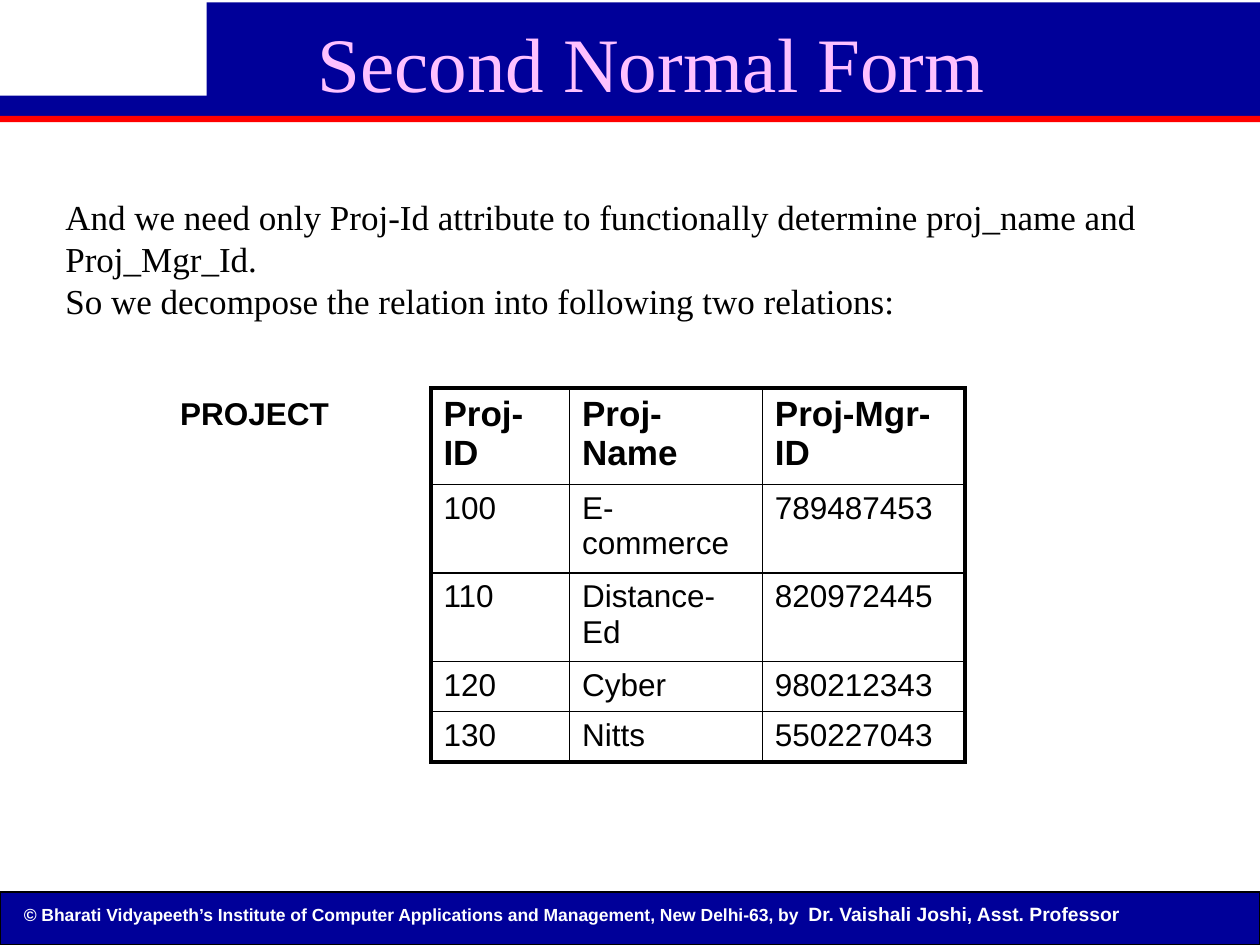
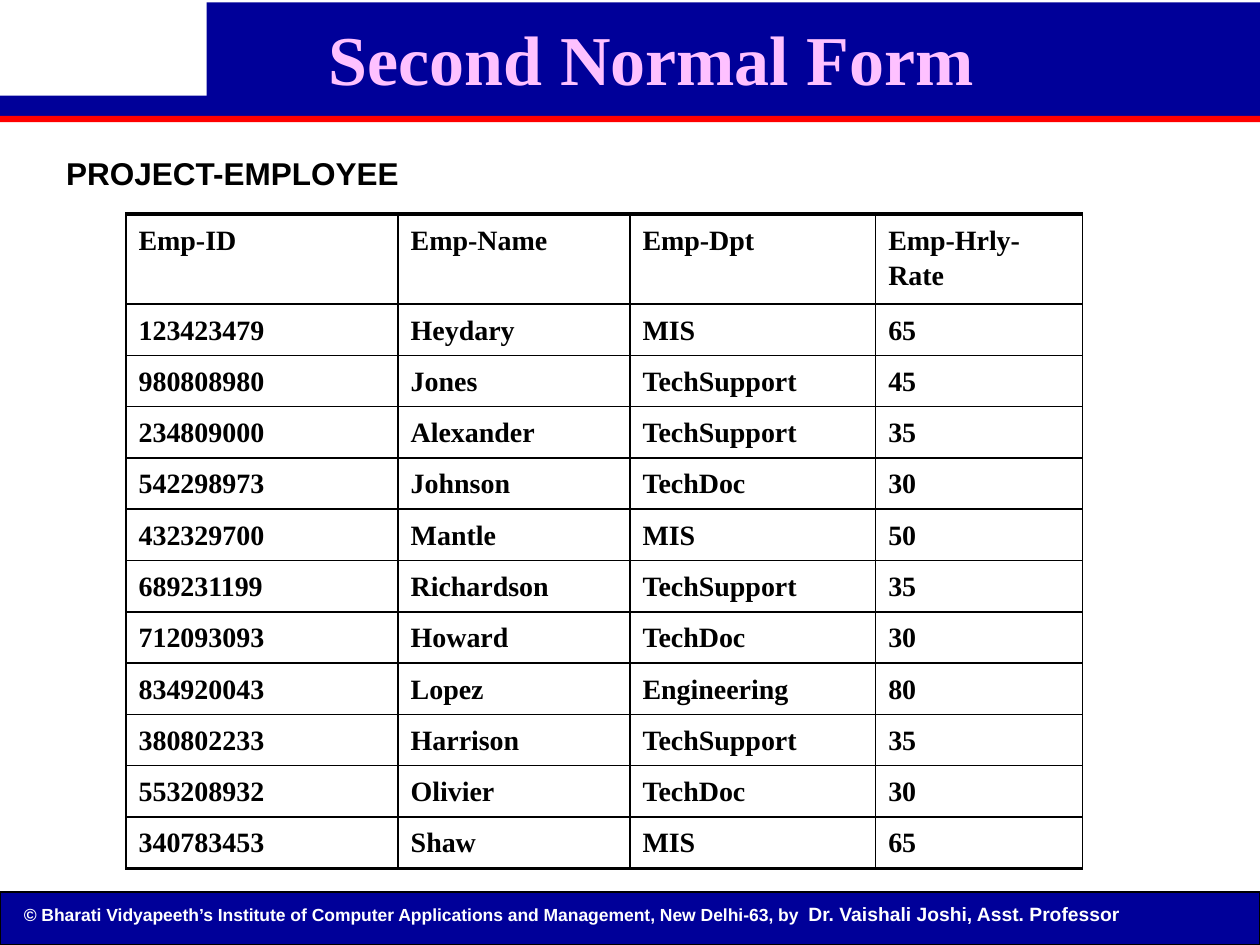
from lxml import etree
from pptx import Presentation
from pptx.dml.color import RGBColor
from pptx.enum.shapes import MSO_SHAPE
from pptx.enum.text import PP_ALIGN
from pptx.oxml.ns import qn
from pptx.util import Inches, Pt

NAVY = RGBColor(0x00, 0x00, 0x99)
RED = RGBColor(0xFF, 0x00, 0x00)
PINK = RGBColor(0xFE, 0xC1, 0xFF)
WHITE = RGBColor(0xFF, 0xFF, 0xFF)
BLACK = RGBColor(0x00, 0x00, 0x00)
SERIF, SANS = "Times New Roman", "Arial"
THIN, THICK = 1, 2.25

COPYRIGHT = ("© Bharati Vidyapeeth’s Institute of Computer Applications and "
             "Management, New Delhi-63, by ")
AUTHOR = " Dr. Vaishali Joshi, Asst. Professor"

PROJECTS = [
    ("Proj-ID", "Proj-Name", "Proj-Mgr-ID"),
    ("100", "E-commerce", "789487453"),
    ("110", "Distance-Ed", "820972445"),
    ("120", "Cyber", "980212343"),
    ("130", "Nitts", "550227043"),
]
EMPLOYEES = [
    ("Emp-ID", "Emp-Name", "Emp-Dpt", "Emp-Hrly-Rate"),
    ("123423479", "Heydary", "MIS", "65"),
    ("980808980", "Jones", "TechSupport", "45"),
    ("234809000", "Alexander", "TechSupport", "35"),
    ("542298973", "Johnson", "TechDoc", "30"),
    ("432329700", "Mantle", "MIS", "50"),
    ("689231199", "Richardson", "TechSupport", "35"),
    ("712093093", "Howard", "TechDoc", "30"),
    ("834920043", "Lopez", "Engineering", "80"),
    ("380802233", "Harrison", "TechSupport", "35"),
    ("553208932", "Olivier", "TechDoc", "30"),
    ("340783453", "Shaw", "MIS", "65"),
]


def style_font(font, size, name, color=BLACK, bold=False):
    font.size, font.name, font.bold = Pt(size), name, bold
    font.color.rgb = color


def add_band(s, x, y, w, h, color, outlined=False):
    sp = s.shapes.add_shape(MSO_SHAPE.RECTANGLE, Inches(x), Inches(y), Inches(w), Inches(h))
    sp.shadow.inherit = False
    sp.fill.solid()
    sp.fill.fore_color.rgb = color
    if outlined:
        sp.line.color.rgb = BLACK
        sp.line.width = Pt(0.75)
    else:
        sp.line.fill.background()


def add_text(s, x, y, w, h, text, size, name, color=BLACK, bold=False, align=PP_ALIGN.LEFT,
             wrap=True):
    tf = s.shapes.add_textbox(Inches(x), Inches(y), Inches(w), Inches(h)).text_frame
    tf.word_wrap = wrap
    tf.text = text
    for p in tf.paragraphs:
        p.alignment = align
        for r in p.runs:
            style_font(r.font, size, name, color, bold)
    return tf


def add_label(s, x, y, w, text):
    add_text(s, x, y, w, 0.4, text, 18, SANS, bold=True, align=PP_ALIGN.CENTER, wrap=False)


def add_base_slide(prs, title_height, title_size, title_bold):
    s = prs.slides.add_slide(prs.slide_layouts[6])
    # Header bands
    add_band(s, 0, 0.76, 10, 0.16, NAVY)
    add_band(s, 0, 0.92, 10, 0.05, RED)
    add_band(s, 1.64, 0.02, 8.36, 0.76, NAVY)
    # Footer
    add_band(s, 0, 7.08, 10, 0.42, NAVY, outlined=True)
    tf = add_text(s, 0.09, 7.11, 9.58, 0.29, COPYRIGHT, 10, SANS, WHITE, True)
    r = tf.paragraphs[0].add_run()
    r.text = AUTHOR
    style_font(r.font, 11, SANS, WHITE, True)
    # Title
    tf = add_text(s, 0.67, 0, 9, title_height, "Second Normal Form", title_size, SERIF, PINK,
                  title_bold, PP_ALIGN.CENTER)
    tf.margin_top = Inches(0.12)
    return s


def set_borders(cell, widths):
    tcPr = cell._tc.get_or_add_tcPr()
    for i, (side, width) in enumerate(widths.items()):
        ln = etree.Element(qn(f"a:ln{side}"), w=str(Pt(width)))
        fill = etree.SubElement(ln, qn("a:solidFill"))
        etree.SubElement(fill, qn("a:srgbClr"), val=str(BLACK))
        tcPr.insert(i, ln)


def add_grid(s, x, y, col_widths, row_heights, rows, style_cell, side_width):
    """Add a ruled table with thick top and bottom edges."""
    last_row, last_col = len(rows) - 1, len(col_widths) - 1
    table = s.shapes.add_table(len(rows), len(col_widths), Inches(x), Inches(y),
                               Inches(sum(col_widths)), Inches(sum(row_heights))).table
    table.first_row = table.horz_banding = False
    for col, width in zip(table.columns, col_widths):
        col.width = Inches(width)
    for i, (row, height) in enumerate(zip(rows, row_heights)):
        table.rows[i].height = Inches(height)
        for j, text in enumerate(row):
            cell = table.cell(i, j)
            cell.fill.background()
            cell.text = text
            style_cell(cell.text_frame.paragraphs[0], i)
            set_borders(cell, {
                "L": side_width if j == 0 else THIN,
                "R": side_width if j == last_col else THIN,
                "T": THICK if i == 0 else THIN,
                "B": THICK if i == last_row else THIN,
            })


def style_project(p, row):
    header = row == 0
    style_font(p.runs[0].font, 20 if header else 18, SANS, bold=header)


def style_employee(p, row):
    p.line_spacing = 1.15
    p.space_after = Pt(10)
    style_font(p.runs[0].font, 16, SERIF, bold=True)


def add_project_slide(prs):
    s = add_base_slide(prs, 1.5, 44, False)
    add_grid(s, 3.42, 3.08, [1.1, 1.53, 1.61], [0.72, 0.66, 0.66, 0.38, 0.38], PROJECTS,
             style_project, THICK)
    add_label(s, 1.33, 3.08, 1.38, "PROJECT")
    tf = add_text(s, 0.42, 1.5, 9.17, 1.78,
                  "And we need only Proj-Id attribute to functionally determine "
                  "proj_name and Proj_Mgr_Id.\n"
                  "So we decompose the relation into following two relations:", 20, SERIF)
    for p in tf.paragraphs:
        p.line_spacing = Pt(24)


def add_employee_slide(prs):
    s = add_base_slide(prs, 0.92, 40, True)
    add_label(s, 0.42, 1.17, 2.85, "PROJECT-EMPLOYEE")
    header, total = 0.71, 5.19
    body_rows = len(EMPLOYEES) - 1
    heights = [header] + [(total - header) / body_rows] * body_rows
    add_grid(s, 1, 1.7, [2.16, 1.84, 1.95, 1.64], heights, EMPLOYEES, style_employee, THIN)


def main():
    prs = Presentation()
    prs.slide_width, prs.slide_height = Inches(10), Inches(7.5)
    add_project_slide(prs)
    add_employee_slide(prs)
    prs.save("out.pptx")


if __name__ == "__main__":
    main()
